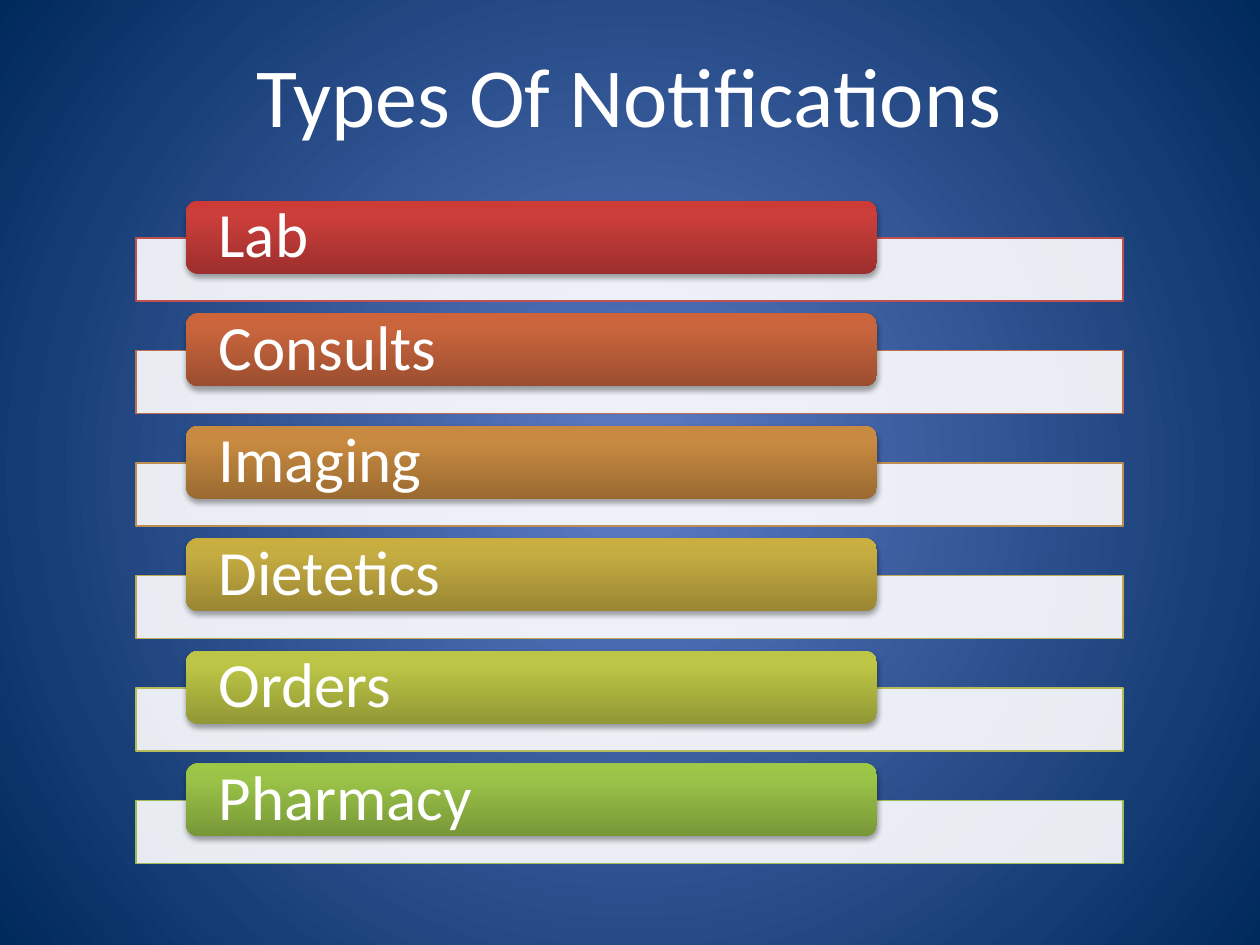
from lxml import etree
from pptx import Presentation
from pptx.dml.color import RGBColor
from pptx.enum.shapes import MSO_SHAPE
from pptx.enum.text import MSO_ANCHOR, PP_ALIGN
from pptx.oxml import parse_xml
from pptx.oxml.ns import nsdecls, qn
from pptx.util import Pt

TITLE = "Types Of Notifications"
NOTIFICATIONS = [
    ("Lab", "C0504D", ("9C2F2D", "CB3E3A", "CE3B37")),
    ("Consults", "BF6F4F", ("9B4E2F", "C9653D", "CD643A")),
    ("Imaging", "BE8D52", ("9A6A31", "C88A40", "CB8B3D")),
    ("Dietetics", "BDA954", ("998533", "C6AD42", "CAAF40")),
    ("Orders", "B5BC57", ("919835", "BCC545", "BFC843")),
    ("Pharmacy", "9BBB59", ("779737", "9BC348", "9DC746")),
]
COLORS = {"white": "FFFFFF", "center": "5E7CC5", "edge": "00295C", "shadow": "000000"}
FONT = "Calibri"
RECTANGLE = MSO_SHAPE.RECTANGLE
ROUNDED = MSO_SHAPE.ROUNDED_RECTANGLE
MIDDLE = MSO_ANCHOR.MIDDLE
LEFT, CENTER = PP_ALIGN.LEFT, PP_ALIGN.CENTER

PX = 914400 // 126
BAR_LEFT, BAR_TOP, BAR_WIDTH, BAR_HEIGHT = 136, 238, 987, 63
TAB_LEFT, TAB_TOP, TAB_WIDTH, TAB_HEIGHT = 186, 201, 691, 73
PITCH = 112.5
TAB_INSET = 29

LINEAR_UP = '<a:lin ang="16200000" scaled="0"/>'
RADIAL = ('<a:path path="circle"><a:fillToRect l="50000" t="50000" '
          'r="50000" b="50000"/></a:path>')


def px(*lengths):
    return [round(length * PX) for length in lengths]


def set_gradient(fill, parent, stops, direction):
    fill.solid()
    stop_xml = "".join(
        f'<a:gs pos="{position * 1000}"><a:srgbClr val="{color}"/></a:gs>'
        for position, color in stops)
    gradient = parse_xml(
        f'<a:gradFill {nsdecls("a")} rotWithShape="1">'
        f'<a:gsLst>{stop_xml}</a:gsLst>{direction}</a:gradFill>')
    solid = parent.find(qn("a:solidFill"))
    parent.replace(solid, gradient)


def add_shadow(shape):
    effects = shape.element.spPr.find(qn("a:effectLst"))
    effects.append(parse_xml(
        f'<a:outerShdw {nsdecls("a")} blurRad="{Pt(3.1)}" dist="{Pt(1.8)}" '
        f'dir="5400000" rotWithShape="0"><a:srgbClr val="{COLORS["shadow"]}">'
        '<a:alpha val="35000"/></a:srgbClr></a:outerShdw>'))


def write_text(shape, text, size, alignment, inset):
    frame = shape.text_frame
    frame.word_wrap = True
    frame.vertical_anchor = MIDDLE
    frame.margin_left = frame.margin_right = inset * PX
    frame.margin_top = frame.margin_bottom = 0
    paragraph = frame.paragraphs[0]
    paragraph.text = text
    paragraph.alignment = alignment
    paragraph.font.name = FONT
    paragraph.font.size = Pt(size)
    paragraph.font.color.rgb = RGBColor.from_string(COLORS["white"])
    return paragraph


def add_bar(shapes, top, line_color):
    bar = shapes.add_shape(RECTANGLE, *px(BAR_LEFT, top, BAR_WIDTH, BAR_HEIGHT))
    bar.shadow.inherit = False
    bar.fill.solid()
    bar.fill.fore_color.rgb = RGBColor.from_string(COLORS["white"])
    color = bar.element.spPr.find(qn("a:solidFill"))[0]
    etree.SubElement(color, qn("a:alpha"), val="90000")
    bar.line.color.rgb = RGBColor.from_string(line_color)
    bar.line.width = Pt(0.75)


def add_tab(shapes, top, name, colors):
    tab = shapes.add_shape(ROUNDED, *px(TAB_LEFT, top, TAB_WIDTH, TAB_HEIGHT))
    tab.shadow.inherit = False
    add_shadow(tab)
    set_gradient(tab.fill, tab.element.spPr, zip((0, 80, 100), colors), LINEAR_UP)
    tab.line.fill.background()
    write_text(tab, name, 36, LEFT, TAB_INSET).line_spacing = 0.9


def main():
    presentation = Presentation()
    presentation.slide_width, presentation.slide_height = px(1260, 945)
    slide = presentation.slides.add_slide(presentation.slide_layouts[6])
    background = slide.background.fill
    set_gradient(background, slide.element.find(".//" + qn("p:bgPr")),
                 ((0, COLORS["center"]), (100, COLORS["edge"])), RADIAL)

    for index, (name, line_color, tab_colors) in enumerate(NOTIFICATIONS):
        offset = index * PITCH
        add_bar(slide.shapes, BAR_TOP + offset, line_color)
        add_tab(slide.shapes, TAB_TOP + offset, name, tab_colors)

    title = slide.shapes.add_textbox(*px(4, 15, 1250, 158))
    write_text(title, TITLE, 48, CENTER, 13)
    presentation.save("out.pptx")


if __name__ == "__main__":
    main()
